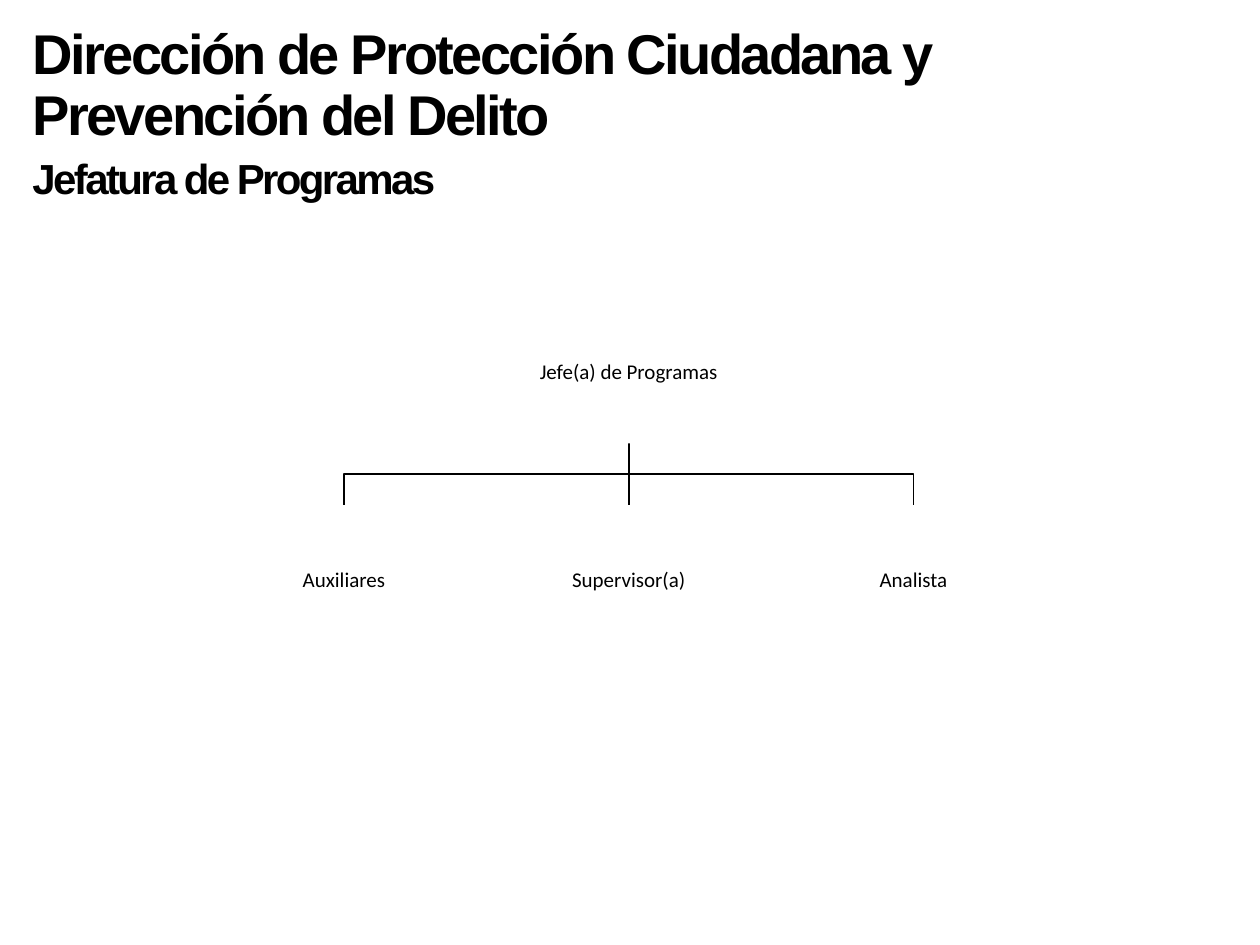
from pptx import Presentation
from pptx.dml.color import RGBColor
from pptx.enum.shapes import MSO_CONNECTOR, MSO_SHAPE
from pptx.enum.text import MSO_ANCHOR, PP_ALIGN
from pptx.util import Pt
from lxml import etree

PX = 9144  # 100 px to the inch
BLACK = RGBColor(0, 0, 0)
WHITE = RGBColor(255, 255, 255)
RECT = MSO_SHAPE.RECTANGLE
LINE = MSO_CONNECTOR.STRAIGHT
MIDDLE = MSO_ANCHOR.MIDDLE
CENTER = PP_ALIGN.CENTER
A_NS = "{http://schemas.openxmlformats.org/drawingml/2006/main}"

HEAD = {"name": "Arial", "bold": True}
LABEL = {"name": "Calibri", "size": Pt(12)}


def px(*nums):
    return [round(n * PX) for n in nums]


def style(font, look):
    font.color.rgb = BLACK
    for key, value in look.items():
        setattr(font, key, value)


def ink(line):
    line.color.rgb = BLACK
    line.width = Pt(1)


def title(slide, box, lines):
    frame = slide.shapes.add_textbox(*px(*box)).text_frame
    frame.word_wrap = True
    for i, (text, size, lead, gap) in enumerate(lines):
        para = frame.add_paragraph() if i else frame.paragraphs[0]
        para.line_spacing = lead
        para.space_before = Pt(gap)
        run = para.add_run()
        run.text = text
        style(run.font, {**HEAD, "size": Pt(size)})
        run.font._element.set("spc", "-150")


def card(slide, box, text):
    shape = slide.shapes.add_shape(RECT, *px(*box))
    shape.shadow.inherit = False
    shape.fill.solid()
    shape.fill.fore_color.rgb = WHITE
    shape.line.fill.background()
    frame = shape.text_frame
    frame.word_wrap = True
    frame.vertical_anchor = MIDDLE
    for side in ("left", "right", "top", "bottom"):
        setattr(frame, f"margin_{side}", PX)
    para = frame.paragraphs[0]
    para.alignment = CENTER
    run = para.add_run()
    run.text = text
    style(run.font, LABEL)


def branch(slide, start, end):
    (x, top), (to, low) = start, end
    if x == to:
        link = slide.shapes.add_connector(LINE, *px(x, top, to, low))
        etree.SubElement(link._element.spPr, A_NS + "effectLst")
    else:
        mid = (top + low) // 2
        path = slide.shapes.build_freeform(x, top, scale=PX)
        path.add_line_segments([(x, mid), (to, mid), (to, low)], close=False)
        link = path.convert_to_shape()
        link.shadow.inherit = False
        link.fill.background()
    ink(link.line)


def chart(slide, box, boss, staff):
    left, top, width, height = box
    boss_w, boss_h = 231, 115
    card_w, card_h = 178, 118
    mid = left + width // 2
    step = (width - card_w) // (len(staff) - 1)
    low = top + height - card_h

    # Branches lie behind the cards
    for i in reversed(range(len(staff))):
        end = left + card_w // 2 + i * step
        branch(slide, (mid, top + boss_h), (end, low))

    # Head, then the row of staff
    card(slide, (mid - boss_w / 2, top, boss_w, boss_h), boss)
    for i, name in enumerate(staff):
        card(slide, (left + i * step, low, card_w, card_h), name)


def main():
    deck = Presentation()
    deck.slide_width, deck.slide_height = px(1000, 750)
    slide = deck.slides.add_slide(deck.slide_layouts[6])
    title(slide, (16, 16, 784, 147), [
        ("Dirección de Protección Ciudadana y Prevención del Delito", 32, 0.9, 0),
        ("Jefatura de Programas", 24, 1.0, 3),
    ])
    chart(slide, (184, 237, 630, 282), "Jefe(a) de Programas",
          ["Auxiliares", "Supervisor(a)", "Analista"])
    deck.save("out.pptx")


if __name__ == "__main__":
    main()
